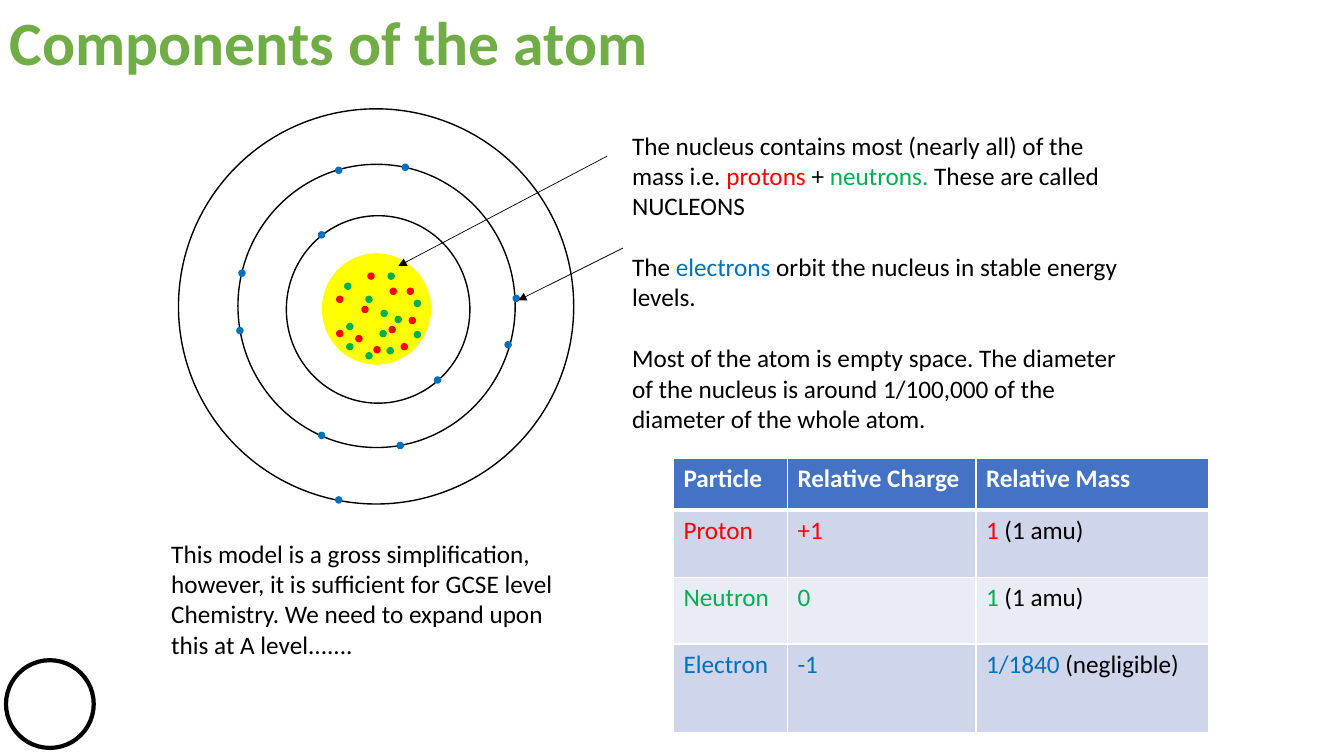
"""Build the slide on the components of the atom."""
from lxml.etree import SubElement
from pptx import Presentation
from pptx.dml.color import RGBColor
from pptx.enum.shapes import MSO_CONNECTOR as LINE, MSO_SHAPE as SHAPE
from pptx.enum.text import MSO_ANCHOR as ANCHOR
from pptx.oxml.ns import qn
from pptx.util import Inches, Pt

rgb = RGBColor.from_string
BLACK, WHITE = "000000", "FFFFFF"
RED, GREEN, BLUE = "FF0000", "00B050", "0070C0"

prs = Presentation()
prs.slide_width, prs.slide_height = Inches(13.33), Inches(7.5)
slide = prs.slides.add_slide(prs.slide_layouts[6])
shapes = slide.shapes


def write(paragraph, text, color=BLACK, size=18, bold=False):
    run = paragraph.add_run()
    run.text = text
    run.font.name = "Calibri"
    run.font.size = Pt(size)
    run.font.bold = bold
    run.font.color.rgb = rgb(color)


def circle(left, top, width, height, fill=None, line=BLACK, weight=1):
    oval = shapes.add_shape(SHAPE.OVAL, Inches(left), Inches(top), Inches(width), Inches(height))
    oval.shadow.inherit = False
    if fill:
        oval.fill.solid()
        oval.fill.fore_color.rgb = rgb(fill)
    else:
        oval.fill.background()
    oval.line.color.rgb = rgb(line)
    oval.line.width = Pt(weight)


circle(0.06, 6.55, 0.87, 0.87, fill=WHITE, weight=3)
circle(3.2, 2.52, 1.07, 1.09, fill="FFFF00", line="FFFF00")
for shell in [(1.77, 1.08, 3.92, 3.92), (2.36, 1.63, 2.75, 2.81), (2.84, 2.14, 1.82, 1.86)]:
    circle(*shell)

particles = {
    RED: [(3.65, 2.71), (3.87, 2.86), (3.59, 3.04), (4.06, 3.15), (3.71, 3.44), (3.34, 3.28),
          (3.34, 2.94), (3.98, 3.41), (4.04, 2.86), (3.53, 3.33), (3.86, 3.24)],
    GREEN: [(3.63, 3.5), (3.84, 3.45), (3.77, 3.28), (3.92, 3.14), (4.11, 3.29), (3.42, 2.81),
            (3.78, 3.08), (3.44, 3.21), (3.85, 2.71), (3.63, 2.94), (4.11, 2.98), (3.44, 3.41)],
    BLUE: [(3.16, 2.3), (4.31, 3.74), (3.99, 1.63), (3.33, 1.66), (5.01, 3.39), (2.37, 2.68),
           (2.35, 3.25), (5.09, 2.93), (3.94, 4.39), (3.16, 4.29), (3.33, 4.93)],
}
for color, places in particles.items():
    for left, top in places:
        circle(left, top, 0.06, 0.06, fill=color, line=color)

for x1, y1, x2, y2 in [(6.02, 1.55, 3.95, 2.64), (6.18, 2.46, 5.14, 2.98)]:
    pointer = shapes.add_connector(LINE.STRAIGHT, Inches(x1), Inches(y1), Inches(x2), Inches(y2))
    pointer.line.color.rgb = rgb(BLACK)
    pointer.line.width = Pt(0.5)
    SubElement(pointer.line._get_or_add_ln(), qn("a:tailEnd"), type="triangle")
    SubElement(pointer._element.spPr, qn("a:effectLst"))

title = shapes.add_textbox(Inches(0), Inches(-0.27), Inches(12.42), Inches(1.45)).text_frame
title.word_wrap = True
title.vertical_anchor = ANCHOR.MIDDLE
title.paragraphs[0].line_spacing = 0.9
write(title.paragraphs[0], "Components of the atom", color="70AD47", size=44, bold=True)

facts = [
    [("The nucleus contains most (nearly all) of the mass i.e. ", BLACK), ("protons", RED),
     (" + ", BLACK), ("neutrons. ", GREEN), ("These are called NUCLEONS", BLACK)],
    [("The ", BLACK), ("electrons ", BLUE),
     ("orbit the nucleus in stable energy levels.", BLACK)],
    [("Most of the atom is empty space. The diameter of the nucleus is around 1/100,000 "
      "of the diameter of the whole atom.", BLACK)],
]
caveat = [[("This model is a gross simplification, however, it is sufficient for GCSE level "
            "Chemistry. We need to expand upon this at A level.......", BLACK)]]
for notes, left, top, width, height in [(facts, 6.17, 1.24, 5.18, 3.13),
                                        (caveat, 1.6, 5.29, 4.09, 1.31)]:
    frame = shapes.add_textbox(Inches(left), Inches(top), Inches(width), Inches(height)).text_frame
    frame.word_wrap = True
    for index, note in enumerate(notes):
        paragraph = frame.add_paragraph() if index else frame.paragraphs[0]
        if index:
            paragraph.space_before = Pt(22)
        for text, color in note:
            write(paragraph, text, color)

rows = [
    (WHITE, "4472C4", 0.51, ["Particle", "Relative Charge", "Relative Mass"], ""),
    (RED, "CFD5EA", 0.67, ["Proton", "+1", "1 "], "(1 amu)"),
    (GREEN, "E9EBF5", 0.66, ["Neutron", "0", "1 "], "(1 amu)"),
    (BLUE, "CFD5EA", 0.88, ["Electron", "-1", "1/1840 "], "(negligible)"),
]
properties = shapes.add_table(4, 3, Inches(6.68), Inches(4.55), Inches(5.3), Inches(2.71)).table
for column, width in zip(properties.columns, [1.13, 1.87, 2.31]):
    column.width = Inches(width)
for r, (color, fill, height, values, remark) in enumerate(rows):
    properties.rows[r].height = Inches(height)
    for c, value in enumerate(values):
        cell = properties.cell(r, c)
        paragraph = cell.text_frame.paragraphs[0]
        write(paragraph, value, color, bold=r == 0)
        if remark and c == 2:
            write(paragraph, remark)
        for side in "LRTB":
            thick = (r, side) in [(0, "B"), (1, "T")]
            border = SubElement(cell._tc.get_or_add_tcPr(), qn(f"a:ln{side}"),
                                w=str(Pt(3 if thick else 1)))
            SubElement(SubElement(border, qn("a:solidFill")), qn("a:srgbClr"), val=WHITE)
        cell.fill.solid()
        cell.fill.fore_color.rgb = rgb(fill)

prs.save("out.pptx")
